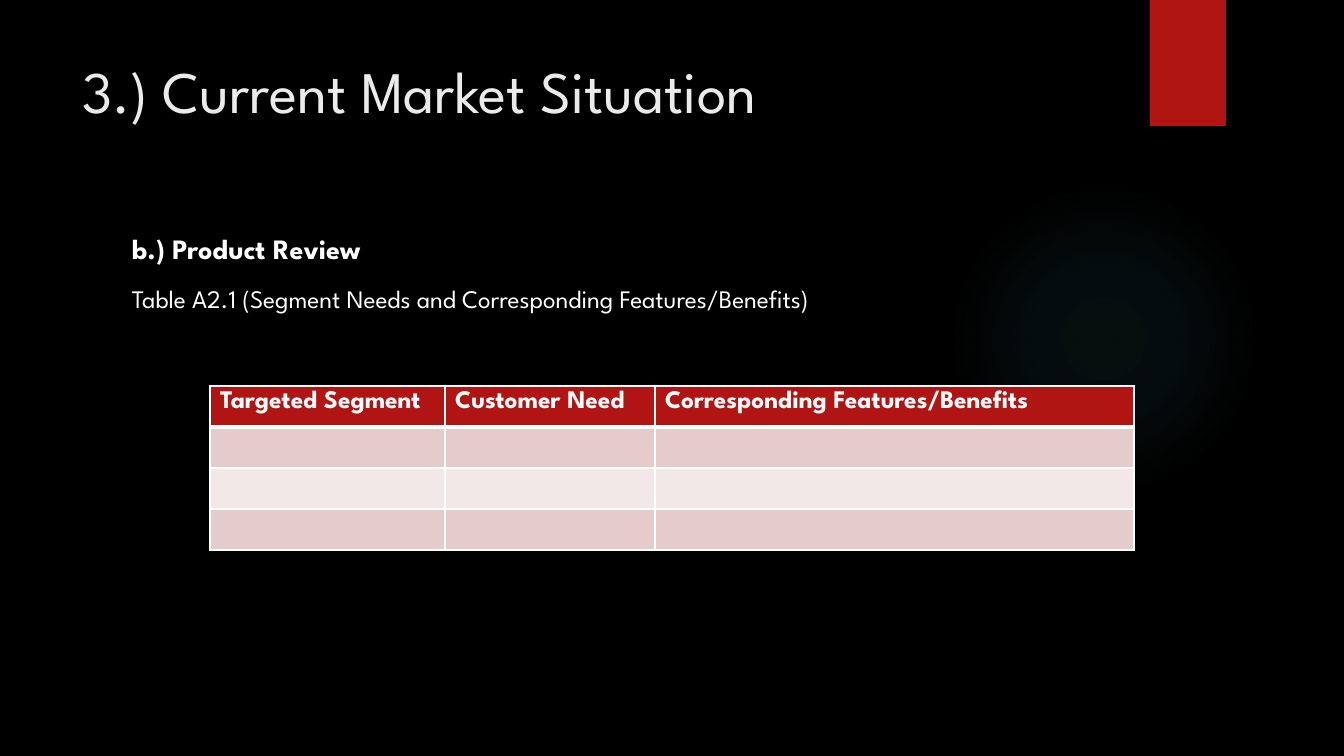
"""Build the product review slide with its segment needs table."""
from lxml import etree
from pptx import Presentation, util as u
from pptx.dml.color import RGBColor
from pptx.enum import shapes, text
from pptx.oxml import parse_xml
from pptx.oxml.ns import nsdecls, qn

TITLE = "3.) Current Market Situation"
BODY = [
    ("b.) Product Review", 20, True, 0),
    ("Table A2.1 (Segment Needs and Corresponding Features/Benefits)", 18, False, 13),
]
HEADERS = ["Targeted Segment", "Customer Need", "Corresponding Features/Benefits"]
COLUMN_WIDTHS = [235, 210, 479]
ROW_HEIGHT = 41
ROW_FILLS = ["red", "rose", "blush", "rose"]
GLOW_STOPS = [(0, 7), (36, 6), (69, 0)]
COLORS = {
    "black": "000000", "white": "FFFFFF", "title": "EBEBEB", "red": "B01513",
    "rose": "E4CCCC", "blush": "F2E8E7", "glow": "50B9C1",
}
FONT = "League Spartan"
PX = 914400 / 100.8


def px(*lengths):
    return [u.Emu(round(length * PX)) for length in lengths]


def color(name):
    return RGBColor.from_string(COLORS[name])


def paint(thing, name):
    thing.fill.solid()
    thing.fill.fore_color.rgb = color(name)


def style(font, size, name="white", bold=False):
    font.name, font.size, font.bold = FONT, u.Pt(size), bold
    font.color.rgb = color(name)


def add_span(para, words, size, name="white", bold=False):
    span = para.add_run()
    span.text = words
    style(span.font, size, name, bold)


def add_decoration(page, kind, *place):
    shape = page.shapes.add_shape(kind, *px(*place))
    shape.shadow.inherit = False
    shape.line.fill.background()
    paint(shape, "red")
    return shape


def add_glow(page):
    glow = add_decoration(page, shapes.MSO_SHAPE.OVAL, 949, 184, 310, 310)
    stops = "".join(
        f'<a:gs pos="{spot * 1000}"><a:srgbClr val="{COLORS["glow"]}">'
        f'<a:alpha val="{alpha * 1000}"/></a:srgbClr></a:gs>'
        for spot, alpha in GLOW_STOPS
    )
    gradient = parse_xml(
        f'<a:gradFill {nsdecls("a")}><a:gsLst>{stops}</a:gsLst><a:path path="circle">'
        '<a:fillToRect l="50000" t="50000" r="50000" b="50000"/></a:path></a:gradFill>'
    )
    properties = glow.element.spPr
    properties.replace(properties.find(qn("a:solidFill")), gradient)


def add_borders(cell, bottom):
    properties = cell._tc.get_or_add_tcPr()
    for index, (side, width) in enumerate(zip("LRTB", (1, 1, 1, bottom))):
        line = etree.Element(qn(f"a:ln{side}"), w=str(u.Pt(width)))
        fill = etree.SubElement(line, qn("a:solidFill"))
        etree.SubElement(fill, qn("a:srgbClr"), val=COLORS["white"])
        properties.insert(index, line)


def add_segment_table(page):
    place = px(210, 386, sum(COLUMN_WIDTHS), ROW_HEIGHT * len(ROW_FILLS))
    table = page.shapes.add_table(len(ROW_FILLS), len(HEADERS), *place).table
    for column, width in zip(table.columns, px(*COLUMN_WIDTHS)):
        column.width = width
    for index, (row, fill) in enumerate(zip(table.rows, ROW_FILLS)):
        row.height = px(ROW_HEIGHT)[0]
        for cell, header in zip(row.cells, HEADERS):
            paint(cell, fill)
            add_borders(cell, 1 if index else 3)
            para = cell.text_frame.paragraphs[0]
            if index:
                style(para.font, 18)
            else:
                add_span(para, header, 18, bold=True)


def add_title(page):
    title = page.shapes.title
    title.left, title.top, title.width, title.height = px(72, 50, 1037, 154)
    frame = title.text_frame
    frame.auto_size = text.MSO_AUTO_SIZE.NONE
    frame.vertical_anchor = text.MSO_ANCHOR.TOP
    para = frame.paragraphs[0]
    para.alignment = text.PP_ALIGN.LEFT
    add_span(para, TITLE, 42, "title")


def add_body(page):
    frame = page.shapes.add_textbox(*px(122, 227, 986, 463)).text_frame
    frame.word_wrap = True
    for index, (words, size, bold, before) in enumerate(BODY):
        para = frame.add_paragraph() if index else frame.paragraphs[0]
        para.space_before = u.Pt(before)
        add_span(para, words, size, bold=bold)


def main():
    deck = Presentation()
    deck.slide_width, deck.slide_height = px(1344, 756)
    page = deck.slides.add_slide(deck.slide_layouts[5])
    paint(page.background, "black")
    add_glow(page)
    add_decoration(page, shapes.MSO_SHAPE.RECTANGLE, 1150, 0, 76, 126)
    add_title(page)
    add_body(page)
    add_segment_table(page)
    deck.save("out.pptx")


if __name__ == "__main__":
    main()
